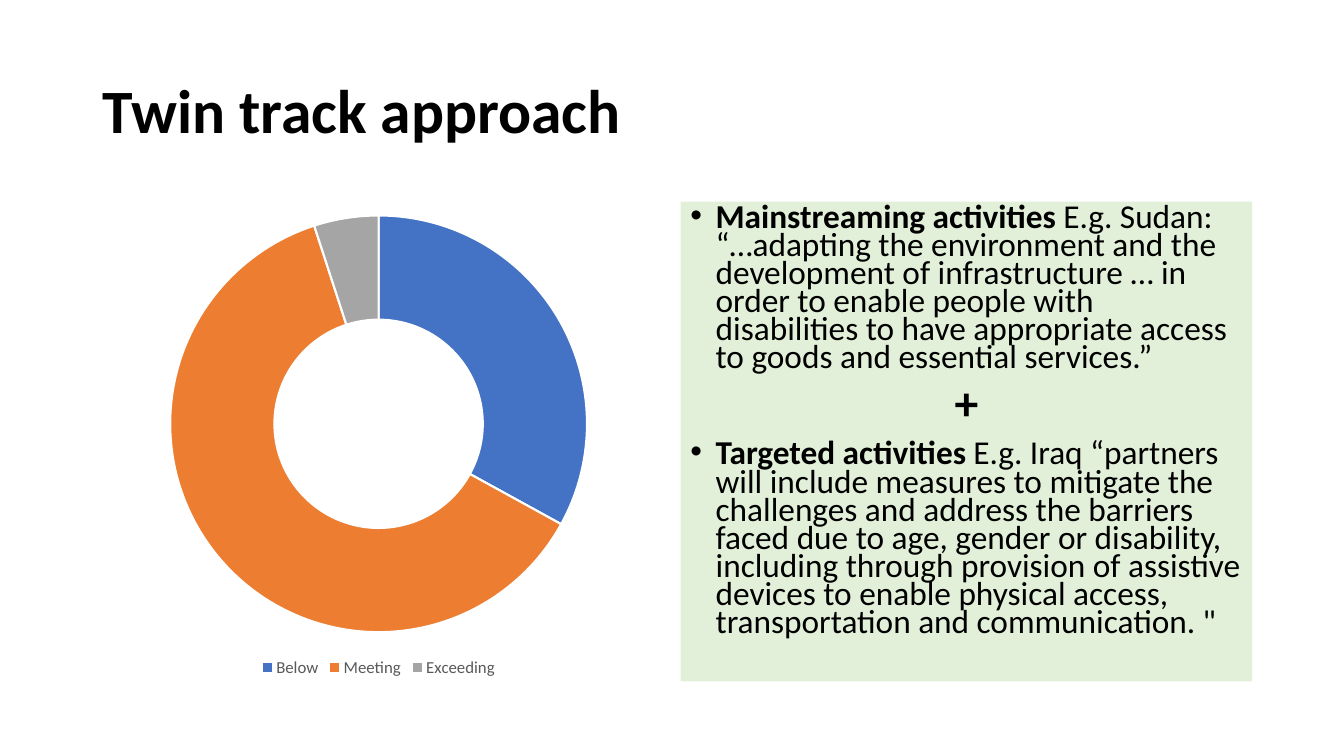
from dataclasses import dataclass

from lxml import etree
from pptx import Presentation
from pptx.chart.data import CategoryChartData
from pptx.dml.color import RGBColor
from pptx.enum.chart import XL_CHART_TYPE, XL_LEGEND_POSITION
from pptx.enum.shapes import MSO_SHAPE
from pptx.enum.text import MSO_ANCHOR, PP_ALIGN
from pptx.oxml.ns import qn
from pptx.slide import Slide
from pptx.text.text import TextFrame
from pptx.util import Inches, Pt

DOUGHNUT = XL_CHART_TYPE.DOUGHNUT
LEGEND_BOTTOM = XL_LEGEND_POSITION.BOTTOM
RECTANGLE = MSO_SHAPE.RECTANGLE
TOP, MIDDLE = MSO_ANCHOR.TOP, MSO_ANCHOR.MIDDLE
LEFT, CENTER = PP_ALIGN.LEFT, PP_ALIGN.CENTER


@dataclass(frozen=True)
class Theme:
    font: str = "Calibri"
    text: str = "000000"
    legend: str = "595959"
    panel: str = "E2F0D9"
    slice_border: str = "FFFFFF"
    title_size: float = 44
    body_size: float = 23.8
    plus_size: float = 34
    chart_size: float = 10
    legend_size: float = 12


@dataclass(frozen=True)
class Run:
    text: str
    size: float
    bold: bool = False


@dataclass(frozen=True)
class Paragraph:
    runs: tuple[Run, ...]
    spacing: float = 0.7
    before: float = 10
    bullet: bool = False
    align: PP_ALIGN = LEFT


@dataclass(frozen=True)
class Rating:
    name: str
    value: int
    color: str


@dataclass(frozen=True)
class Box:
    left: float
    top: float
    width: float
    height: float

    def emu(self) -> tuple[int, int, int, int]:
        return (Inches(self.left), Inches(self.top),
                Inches(self.width), Inches(self.height))


THEME = Theme()
TITLE_BOX = Box(0.92, 0.4, 11.5, 1.45)
CHART_BOX = Box(0.92, 2, 5.67, 4.76)
PANEL_BOX = Box(6.75, 2, 5.67, 4.76)
HOLE_PERCENT = 75

RATINGS = (
    Rating("Below", 33, "4472C4"),
    Rating("Meeting", 62, "ED7D31"),
    Rating("Exceeding", 5, "A5A5A5"),
)

TITLE = Paragraph((Run("Twin track approach", THEME.title_size, True),), 0.9, 0)

TRACKS = (
    Paragraph((
        Run("Mainstreaming activities", THEME.body_size, True),
        Run(" E.g. Sudan: “…adapting the environment and the development of "
            "infrastructure … in order to enable people with disabilities to "
            "have appropriate access to goods and essential services.”",
            THEME.body_size),
    ), bullet=True),
    Paragraph((Run("+", THEME.plus_size, True),), align=CENTER),
    Paragraph((
        Run("Targeted activities ", THEME.body_size, True),
        Run("E.g. Iraq “partners will include measures to mitigate the "
            "challenges and address the barriers faced due to age, gender or "
            "disability, including through provision of assistive devices to "
            "enable physical access, transportation and communication. \"",
            THEME.body_size),
    ), bullet=True),
)


def rgb(color: str) -> RGBColor:
    return RGBColor.from_string(color)


def style_font(font, size: float, color: str, bold: bool = False) -> None:
    font.name = THEME.font
    font.size = Pt(size)
    font.color.rgb = rgb(color)
    font.bold = bold


def add_bullet(p) -> None:
    pPr = p._p.get_or_add_pPr()
    pPr.set("marL", str(Inches(0.25)))
    pPr.set("indent", str(Inches(-0.25)))
    etree.SubElement(pPr, qn("a:buFont")).set("typeface", "Arial")
    etree.SubElement(pPr, qn("a:buChar")).set("char", "•")


def write(tf: TextFrame, paragraphs: tuple[Paragraph, ...], anchor: MSO_ANCHOR) -> None:
    tf.word_wrap = True
    tf.vertical_anchor = anchor
    for i, item in enumerate(paragraphs):
        p = tf.add_paragraph() if i else tf.paragraphs[0]
        p.alignment = item.align
        p.line_spacing = item.spacing
        p.space_before = Pt(item.before)
        if item.bullet:
            add_bullet(p)
        for run in item.runs:
            r = p.add_run()
            r.text = run.text
            style_font(r.font, run.size, THEME.text, run.bold)


def add_title(s: Slide) -> None:
    sp = s.shapes.add_textbox(*TITLE_BOX.emu())
    write(sp.text_frame, (TITLE,), MIDDLE)


def add_ratings_chart(s: Slide) -> None:
    data = CategoryChartData()
    data.categories = [rating.name for rating in RATINGS]
    data.add_series("Series 1", [rating.value for rating in RATINGS])
    chart = s.shapes.add_chart(DOUGHNUT, *CHART_BOX.emu(), data).chart
    chart.has_title = False
    style_font(chart.font, THEME.chart_size, THEME.text)
    chart.has_legend = True
    chart.legend.position = LEGEND_BOTTOM
    chart.legend.include_in_layout = False
    style_font(chart.legend.font, THEME.legend_size, THEME.legend)
    plot = chart.plots[0]
    plot.vary_by_categories = True
    for i, rating in enumerate(RATINGS):
        fmt = plot.series[0].points[i].format
        fmt.fill.solid()
        fmt.fill.fore_color.rgb = rgb(rating.color)
        fmt.line.color.rgb = rgb(THEME.slice_border)
        fmt.line.width = Pt(1.5)
    for hole in chart.element.iter(qn("c:holeSize")):
        hole.set("val", str(HOLE_PERCENT))


def add_tracks_panel(s: Slide) -> None:
    sp = s.shapes.add_shape(RECTANGLE, *PANEL_BOX.emu())
    sp.shadow.inherit = False
    sp.fill.solid()
    sp.fill.fore_color.rgb = rgb(THEME.panel)
    sp.line.fill.background()
    write(sp.text_frame, TRACKS, TOP)


def main() -> None:
    prs = Presentation()
    prs.slide_width, prs.slide_height = Inches(13.33), Inches(7.5)
    s = prs.slides.add_slide(prs.slide_layouts[6])
    add_title(s)
    add_ratings_chart(s)
    add_tracks_panel(s)
    prs.save("out.pptx")


if __name__ == "__main__":
    main()
